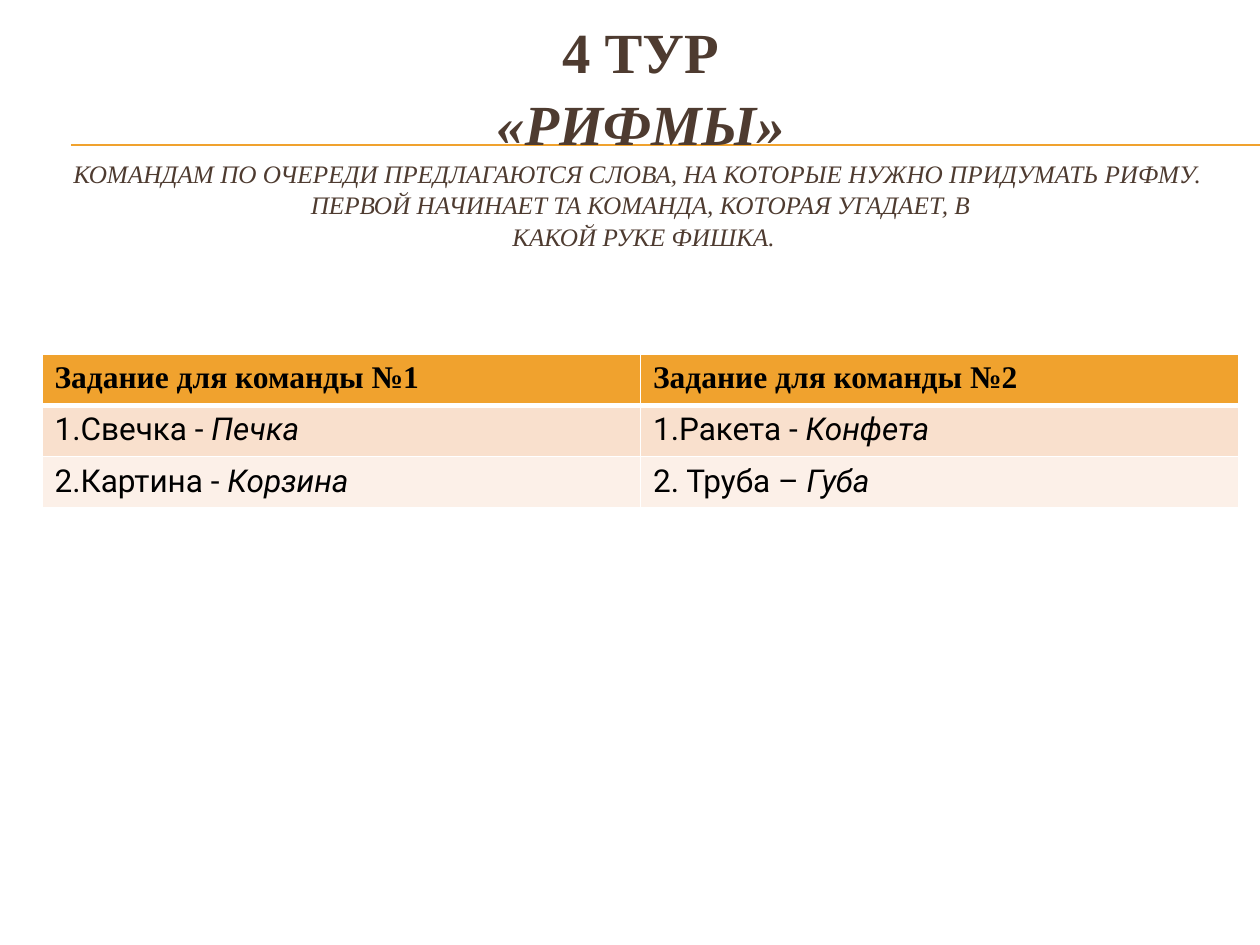
"""Build the slide for round four, the rhyming contest."""
from copy import deepcopy

from lxml import etree
from pptx import Presentation
from pptx.dml.color import RGBColor
from pptx.enum.shapes import MSO_CONNECTOR
from pptx.enum.text import MSO_ANCHOR, PP_ALIGN
from pptx.oxml.ns import qn
from pptx.util import Pt

STRAIGHT = MSO_CONNECTOR.STRAIGHT
MIDDLE = MSO_ANCHOR.MIDDLE
CENTER = PP_ALIGN.CENTER

SERIF, SANS = "Times New Roman", "Roboto"
ORANGE, BROWN, BLACK, WHITE = "F0A22E", "4E3B30", "000000", "FFFFFF"
ROW_FILLS = [ORANGE, "F9E0CD", "FCF0E8"]

TITLE_LINES = [
    ("4 ТУР", 32.4, True, False),
    ("«РИФМЫ»", 32.4, True, True),
    ("КОМАНДАМ ПО ОЧЕРЕДИ ПРЕДЛАГАЮТСЯ СЛОВА, НА КОТОРЫЕ НУЖНО ПРИДУМАТЬ РИФМУ. ", 14.4, False, True),
    ("ПЕРВОЙ НАЧИНАЕТ ТА КОМАНДА, КОТОРАЯ УГАДАЕТ, В", 14.4, False, True),
    (" КАКОЙ РУКЕ ФИШКА.", 14.4, False, True),
]
HEADERS = ["Задание для команды №1", "Задание для команды №2"]
RHYMES = [
    [("1.Свечка - ", "Печка"), ("1.Ракета - ", "Конфета")],
    [("2.Картина - ", "Корзина"), ("2. Труба – ", "Губа")],
]

SLIDE_WIDTH, SLIDE_HEIGHT = 720, 540
CONTENT_LEFT, CONTENT_WIDTH = 24, 684
TITLE_TOP, TITLE_HEIGHT = 33.8, 84.2
RULE_LEFT, RULE_TOPS = 40.5, [82.6, 83.2]
TABLE_TOP, ROW_HEIGHT = 202.5, 29.2


def color(value):
    return RGBColor.from_string(value)


def add_run(paragraph, text, size, font_name, font_color, bold=False, italic=False):
    run = paragraph.add_run()
    run.text = text
    font = run.font
    font.size, font.name, font.bold, font.italic = Pt(size), font_name, bold, italic
    font.color.rgb = color(font_color)
    return run


def add_rule(slide, top):
    rule = slide.shapes.add_connector(STRAIGHT, Pt(RULE_LEFT), Pt(top), Pt(SLIDE_WIDTH), Pt(top))
    rule.line.color.rgb = color(ORANGE)
    rule.line.width = Pt(0.75)
    etree.SubElement(rule._element.spPr, qn("a:effectLst"))


def add_title(slide):
    box = slide.shapes.add_textbox(Pt(CONTENT_LEFT), Pt(TITLE_TOP), Pt(CONTENT_WIDTH), Pt(TITLE_HEIGHT))
    frame = box.text_frame
    frame.word_wrap = True
    frame.vertical_anchor = MIDDLE
    paragraph = frame.paragraphs[0]
    paragraph.alignment = CENTER
    paragraph.line_spacing = 1.05
    for index, (text, size, bold, italic) in enumerate(TITLE_LINES):
        run = add_run(paragraph, text, size, SERIF, BROWN, bold, italic)
        if index < len(TITLE_LINES) - 1:
            paragraph.add_line_break()
            paragraph._p[-1].append(deepcopy(run._r.rPr))


def set_borders(cell, widths):
    properties = cell._tc.get_or_add_tcPr()
    for side, width in widths.items():
        line = etree.SubElement(properties, qn(f"a:ln{side}"), w=str(Pt(width)))
        fill = etree.SubElement(line, qn("a:solidFill"))
        etree.SubElement(fill, qn("a:srgbClr"), val=WHITE)


def add_rhyme_table(slide):
    row_count, column_count = len(RHYMES) + 1, len(HEADERS)
    table = slide.shapes.add_table(
        row_count, column_count, Pt(CONTENT_LEFT), Pt(TABLE_TOP),
        Pt(CONTENT_WIDTH), Pt(ROW_HEIGHT * row_count)).table
    for row in range(row_count):
        for column in range(column_count):
            cell = table.cell(row, column)
            top = 3 if row == 1 else 1
            bottom = 3 if row == 0 else 1
            set_borders(cell, {"L": 1, "R": 1, "T": top, "B": bottom})
            cell.fill.solid()
            cell.fill.fore_color.rgb = color(ROW_FILLS[row])
            paragraph = cell.text_frame.paragraphs[0]
            if row == 0:
                add_run(paragraph, HEADERS[column], 18, SERIF, BLACK, bold=True)
            else:
                word, rhyme = RHYMES[row - 1][column]
                add_run(paragraph, word, 18, SANS, BLACK)
                add_run(paragraph, rhyme, 18, SANS, BLACK, italic=True)


def main():
    presentation = Presentation()
    presentation.slide_width, presentation.slide_height = Pt(SLIDE_WIDTH), Pt(SLIDE_HEIGHT)
    slide = presentation.slides.add_slide(presentation.slide_layouts[6])
    for top in RULE_TOPS:
        add_rule(slide, top)
    add_title(slide)
    add_rhyme_table(slide)
    presentation.save("out.pptx")


if __name__ == "__main__":
    main()
